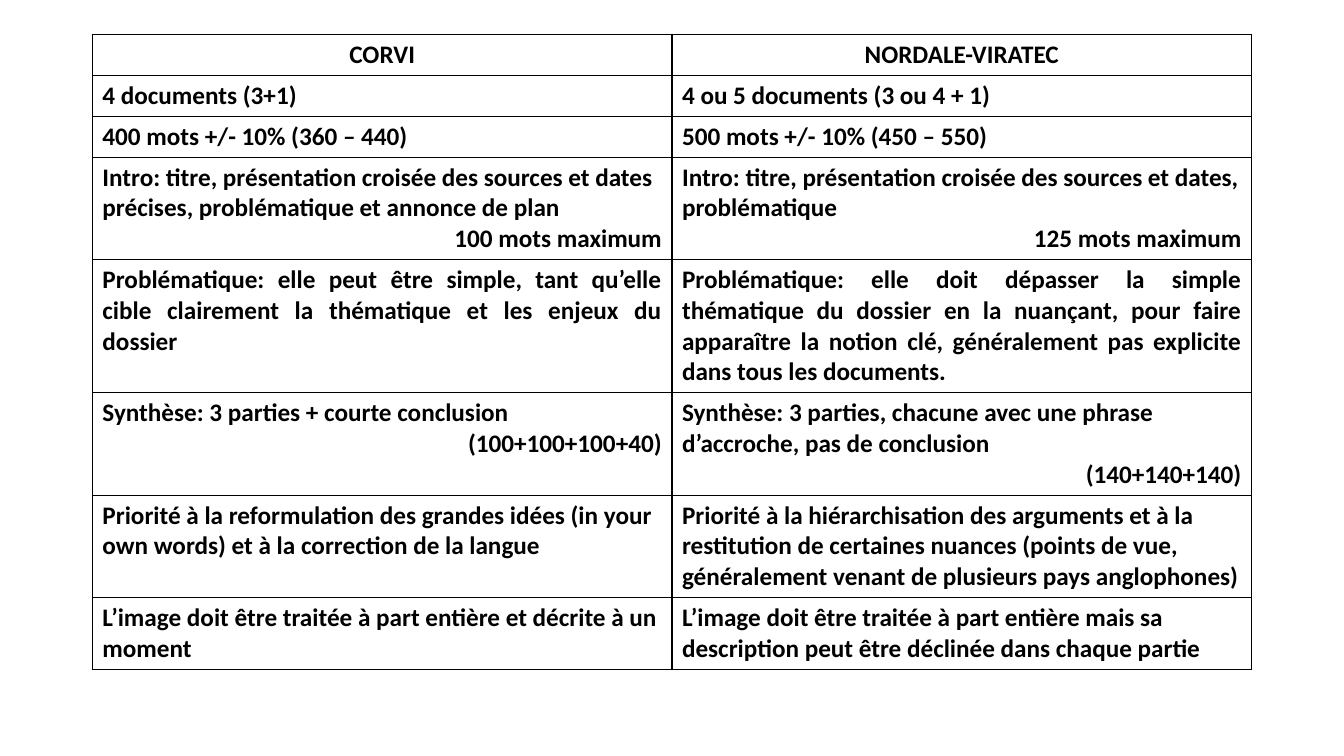
from dataclasses import dataclass

from lxml.etree import SubElement
from pptx import Presentation
from pptx.dml.color import RGBColor
from pptx.enum.text import PP_ALIGN
from pptx.oxml.ns import qn
from pptx.slide import Slide
from pptx.table import _Cell
from pptx.util import Pt


@dataclass(frozen=True)
class Theme:
    """Colours, font and sizes in points."""
    ink: str = "000000"
    font: str = "Calibri"
    size: float = 18
    rule: float = 1


@dataclass(frozen=True)
class Grid:
    """Place and measures of the table in points."""
    left: float = 66
    top: float = 24.6
    width: float = 828
    first: float = 29.25
    line: float = 21.95


@dataclass(frozen=True)
class Para:
    """One paragraph of a cell."""
    text: str
    align: PP_ALIGN = PP_ALIGN.LEFT


@dataclass(frozen=True)
class Row:
    """The two facing cells and the number of text lines they need."""
    lines: int
    cells: tuple[tuple[Para, ...], tuple[Para, ...]]


def pair(lines: int, left: str, right: str, align: PP_ALIGN = PP_ALIGN.LEFT) -> Row:
    """Make a row with one paragraph on each side."""
    return Row(lines, ((Para(left, align),), (Para(right, align),)))


def count(lines: int, left: tuple[str, str], right: tuple[str, str]) -> Row:
    """Make a row whose sides each end in a right-aligned word count."""
    ends = tuple((Para(text), Para(words, PP_ALIGN.RIGHT)) for text, words in (left, right))
    return Row(lines, ends)


THEME = Theme()
GRID = Grid()
ROWS = (
    pair(1, "CORVI", "NORDALE-VIRATEC", PP_ALIGN.CENTER),
    pair(1, "4 documents (3+1)", "4 ou 5 documents (3 ou 4 + 1)"),
    pair(1, "400 mots +/- 10% (360 – 440)", "500 mots +/- 10% (450 – 550)"),
    count(
        3,
        ("Intro: titre, présentation croisée des sources et dates précises, "
         "problématique et annonce de plan", "100 mots maximum"),
        ("Intro: titre, présentation croisée des sources et dates, problématique",
         "125 mots maximum"),
    ),
    pair(
        4,
        "Problématique: elle peut être simple, tant qu’elle cible clairement "
        "la thématique et les enjeux du dossier",
        "Problématique: elle doit dépasser la simple thématique du dossier en la "
        "nuançant, pour faire apparaître la notion clé, généralement pas explicite "
        "dans tous les documents.",
        PP_ALIGN.JUSTIFY,
    ),
    count(
        3,
        ("Synthèse: 3 parties + courte conclusion", "(100+100+100+40)"),
        ("Synthèse: 3 parties, chacune avec une phrase d’accroche, pas de conclusion",
         "(140+140+140)"),
    ),
    pair(
        3,
        "Priorité à la reformulation des grandes idées (in your own words) "
        "et à la correction de la langue",
        "Priorité à la hiérarchisation des arguments et à la restitution de certaines "
        "nuances (points de vue, généralement venant de plusieurs pays anglophones)",
    ),
    pair(
        2,
        "L’image doit être traitée à part entière et décrite à un moment",
        "L’image doit être traitée à part entière mais sa description peut être "
        "déclinée dans chaque partie",
    ),
)


def frame(cell: _Cell) -> None:
    """Rule all four sides of a cell and leave it unfilled."""
    props = cell._tc.get_or_add_tcPr()
    for side in ("lnL", "lnR", "lnT", "lnB"):
        edge = SubElement(props, qn(f"a:{side}"), w=str(Pt(THEME.rule)))
        fill = SubElement(edge, qn("a:solidFill"))
        SubElement(fill, qn("a:srgbClr"), val=THEME.ink)
    cell.fill.background()


def write(cell: _Cell, paras: tuple[Para, ...]) -> None:
    """Write the paragraphs into a cell."""
    body = cell.text_frame
    for spot, para in enumerate(paras):
        block = body.add_paragraph() if spot else body.paragraphs[0]
        block.alignment = para.align
        run = block.add_run()
        run.text = para.text
        run.font.name = THEME.font
        run.font.size = Pt(THEME.size)
        run.font.bold = True
        run.font.color.rgb = RGBColor.from_string(THEME.ink)


def draw(slide: Slide, rows: tuple[Row, ...]) -> None:
    """Draw the comparison table."""
    tall = [GRID.first + GRID.line * (row.lines - 1) for row in rows]
    table = slide.shapes.add_table(
        len(rows), 2, Pt(GRID.left), Pt(GRID.top), Pt(GRID.width), Pt(sum(tall))
    ).table
    table.first_row = False
    table.horz_banding = False
    for index, row in enumerate(rows):
        table.rows[index].height = Pt(tall[index])
        for side, paras in enumerate(row.cells):
            cell = table.cell(index, side)
            frame(cell)
            write(cell, paras)


def main() -> None:
    """Build and save the slide."""
    deck = Presentation()
    deck.slide_width, deck.slide_height = Pt(960), Pt(540)
    draw(deck.slides.add_slide(deck.slide_layouts[6]), ROWS)
    deck.save("out.pptx")


if __name__ == "__main__":
    main()
